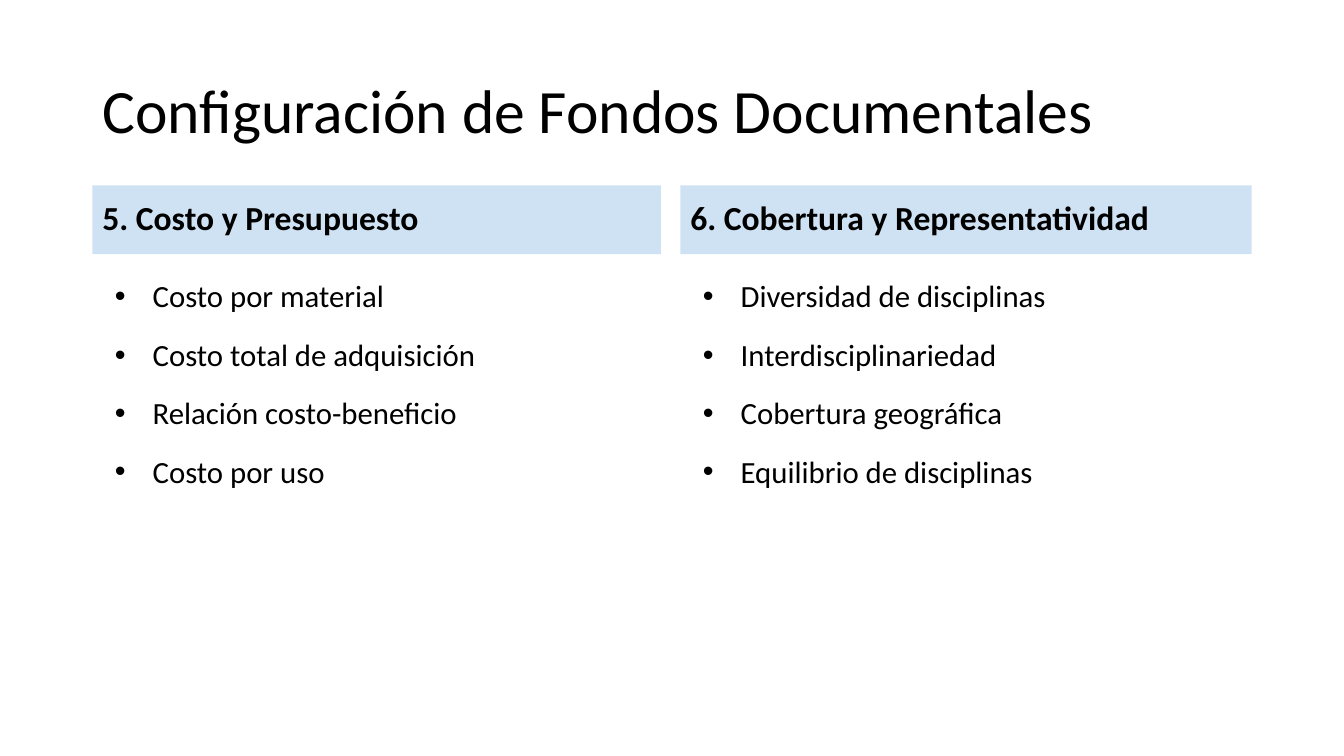
from dataclasses import dataclass

from lxml import etree
from pptx import Presentation
from pptx.dml.color import RGBColor
from pptx.enum import shapes, text
from pptx.oxml import ns
from pptx.util import Pt


@dataclass(frozen=True)
class Theme:
    font: str = "Calibri"
    ink: RGBColor = RGBColor(0x00, 0x00, 0x00)
    band: RGBColor = RGBColor(0xCF, 0xE2, 0xF3)
    title_size: int = 44
    heading_size: int = 24
    item_size: int = 22
    line_spacing: float = 0.9
    item_gap: int = 18
    item_indent: int = 36
    bullet_hang: int = 27


class SlideBuilder:
    def __init__(self, slide, theme):
        self.slide = slide
        self.theme = theme

    def style(self, paragraph, size, bold=False):
        paragraph.alignment = text.PP_ALIGN.LEFT
        paragraph.line_spacing = self.theme.line_spacing
        for run in paragraph.runs:
            run.font.name = self.theme.font
            run.font.size = Pt(size)
            run.font.bold = bold
            run.font.color.rgb = self.theme.ink

    def bullet(self, paragraph):
        properties = paragraph._p.get_or_add_pPr()
        properties.set("marL", str(Pt(self.theme.item_indent)))
        properties.set("indent", str(-Pt(self.theme.bullet_hang)))
        etree.SubElement(properties, ns.qn("a:buFont"), typeface="Arial")
        etree.SubElement(properties, ns.qn("a:buChar"), char="•")

    def title(self, wording, left, top, width, height):
        box = self.slide.shapes.add_textbox(Pt(left), Pt(top), Pt(width), Pt(height))
        frame = box.text_frame
        frame.word_wrap = True
        frame.vertical_anchor = text.MSO_ANCHOR.MIDDLE
        frame.text = wording
        self.style(frame.paragraphs[0], self.theme.title_size)

    def heading(self, wording, left, top, width, height):
        band = self.slide.shapes.add_shape(
            shapes.MSO_SHAPE.RECTANGLE, Pt(left), Pt(top), Pt(width), Pt(height))
        band.shadow.inherit = False
        band.fill.solid()
        band.fill.fore_color.rgb = self.theme.band
        band.line.fill.background()
        frame = band.text_frame
        frame.word_wrap = True
        frame.vertical_anchor = text.MSO_ANCHOR.MIDDLE
        frame.text = wording
        self.style(frame.paragraphs[0], self.theme.heading_size, bold=True)

    def bullet_list(self, items, left, top, width, height):
        box = self.slide.shapes.add_textbox(Pt(left), Pt(top), Pt(width), Pt(height))
        frame = box.text_frame
        frame.word_wrap = True
        frame.text = "\n".join(items)
        for position, paragraph in enumerate(frame.paragraphs):
            self.bullet(paragraph)
            self.style(paragraph, self.theme.item_size)
            if position:
                paragraph.space_before = Pt(self.theme.item_gap)


CRITERIA = [
    ("5. Costo y Presupuesto", 66, 406,
     ["Costo por material", "Costo total de adquisición",
      "Relación costo-beneficio", "Costo por uso"]),
    ("6. Cobertura y Representatividad", 486, 408,
     ["Diversidad de disciplinas", "Interdisciplinariedad",
      "Cobertura geográfica", "Equilibrio de disciplinas"]),
]


def main():
    deck = Presentation()
    deck.slide_width, deck.slide_height = Pt(960), Pt(540)
    builder = SlideBuilder(deck.slides.add_slide(deck.slide_layouts[6]), Theme())
    builder.title("Configuración de Fondos Documentales", 66, 28.75, 828, 104.4)
    for criterion, left, width, measures in CRITERIA:
        builder.heading(criterion, left, 132.5, width, 49)
        builder.bullet_list(measures, left, 197.3, width, 290)
    deck.save("out.pptx")


if __name__ == "__main__":
    main()
